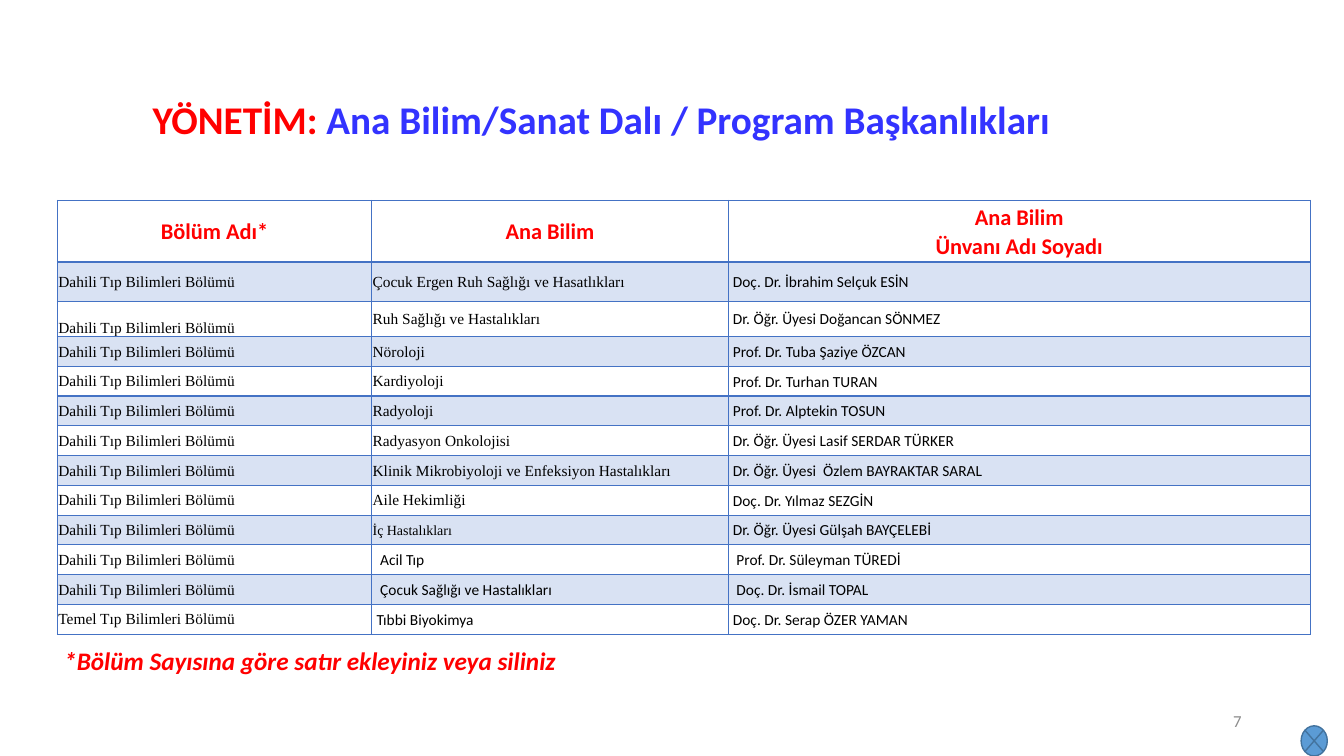
from lxml import etree
from pptx import Presentation
from pptx import util as u
from pptx.dml.color import RGBColor
from pptx.enum import shapes, text
from pptx.oxml import ns

TITLE = [("YÖNETİM: ", "red"), ("Ana Bilim/Sanat Dalı / Program Başkanlıkları", "title_blue")]
HEADERS = ["Bölüm Adı*", "Ana Bilim", "Ana Bilim\nÜnvanı Adı Soyadı"]
INTERNAL = "Dahili Tıp Bilimleri Bölümü"
BASIC = "Temel Tıp Bilimleri Bölümü"
CHAIRS = [
    (INTERNAL, "Çocuk Ergen Ruh Sağlığı ve Hasatlıkları", "Doç. Dr. İbrahim Selçuk ESİN"),
    (INTERNAL, "Ruh Sağlığı ve Hastalıkları", "Dr. Öğr. Üyesi Doğancan SÖNMEZ"),
    (INTERNAL, "Nöroloji", "Prof. Dr. Tuba Şaziye ÖZCAN"),
    (INTERNAL, "Kardiyoloji", "Prof. Dr. Turhan TURAN"),
    (INTERNAL, "Radyoloji", "Prof. Dr. Alptekin TOSUN"),
    (INTERNAL, "Radyasyon Onkolojisi", "Dr. Öğr. Üyesi Lasif SERDAR TÜRKER"),
    (INTERNAL, "Klinik Mikrobiyoloji ve Enfeksiyon Hastalıkları", "Dr. Öğr. Üyesi  Özlem BAYRAKTAR SARAL"),
    (INTERNAL, "Aile Hekimliği", "Doç. Dr. Yılmaz SEZGİN"),
    (INTERNAL, "İç Hastalıkları", "Dr. Öğr. Üyesi Gülşah BAYÇELEBİ"),
    (INTERNAL, "Acil Tıp", "Prof. Dr. Süleyman TÜREDİ"),
    (INTERNAL, "Çocuk Sağlığı ve Hastalıkları", "Doç. Dr. İsmail TOPAL"),
    (BASIC, "Tıbbi Biyokimya", "Doç. Dr. Serap ÖZER YAMAN"),
]
FOOTNOTE = "*Bölüm Sayısına göre satır ekleyiniz veya siliniz"
PAGE_NUMBER = "7"

THEME = {
    "colors": {"red": "FF0000", "title_blue": "3333FF", "black": "000000", "grey": "8C8C8C",
               "grid": "4472C4", "badge": "5B9BD5", "badge_line": "43739E"},
    "sizes": {"title": 28, "header": 16, "body": 11, "small": 10, "note": 18, "page": 12},
    "sans": "Calibri",
    "serif": "Times New Roman",
}
COLUMN_WIDTHS = [7.92, 8.98, 14.67]
ROW_HEIGHTS = [1.55, 0.99, 0.89] + [0.75] * 10
SANS_FROM_ROW = 10
INDENTED_ROWS = (10, 11)
SMALL_CELL = (9, 1)
LOW_CELL = (2, 0)


def color(name):
    return RGBColor.from_string(THEME["colors"][name])


def apply(target, values):
    for name, value in values.items():
        setattr(target, name, value)


def add_run(paragraph, words, size, color_name, font="sans", **style):
    run = paragraph.add_run()
    run.text = words
    apply(run.font, {"name": THEME[font], "size": u.Pt(THEME["sizes"][size]), **style})
    run.font.color.rgb = color(color_name)


def add_text(slide, box, runs, size, frame_format, alignment, spacing=1.0, **style):
    frame = slide.shapes.add_textbox(*map(u.Cm, box)).text_frame
    apply(frame, frame_format)
    paragraph = frame.paragraphs[0]
    apply(paragraph, {"alignment": alignment, "line_spacing": spacing})
    for words, color_name in runs:
        add_run(paragraph, words, size, color_name, **style)


def add_borders(cell, bottom_width):
    properties = cell._tc.get_or_add_tcPr()
    for side, width in (("L", 1), ("R", 1), ("T", 1), ("B", bottom_width)):
        line = etree.SubElement(properties, ns.qn("a:ln" + side), w=str(u.Pt(width)))
        fill = etree.SubElement(line, ns.qn("a:solidFill"))
        etree.SubElement(fill, ns.qn("a:srgbClr"), val=THEME["colors"]["grid"])


def fill_cell(cell, shaded):
    if not shaded:
        cell.fill.background()
        return
    cell.fill.solid()
    cell.fill.fore_color.rgb = color("grid")
    tint = next(cell._tc.tcPr.find(ns.qn("a:solidFill")).iter(ns.qn("a:srgbClr")))
    etree.SubElement(tint, ns.qn("a:alpha"), val="20000")


def write_cell(cell, row, column, words):
    header = row == 0
    serif = not header and (column == 0 or column == 1 and row < SANS_FROM_ROW)
    side = 0.02 if serif else 0.12
    indent = 0.09 if row in INDENTED_ROWS and column > 0 else 0
    low = (row, column) == LOW_CELL
    apply(cell, {
        "vertical_anchor": text.MSO_ANCHOR.BOTTOM if low else text.MSO_ANCHOR.MIDDLE,
        "margin_left": u.Cm(side + indent), "margin_right": u.Cm(side),
        "margin_top": u.Cm(0.02 if serif else 0), "margin_bottom": 0,
    })
    size = "header" if header else "small" if (row, column) == SMALL_CELL else "body"
    for index, line in enumerate(words.split("\n")):
        frame = cell.text_frame
        paragraph = frame.add_paragraph() if index else frame.paragraphs[0]
        apply(paragraph, {
            "alignment": text.PP_ALIGN.CENTER if header else text.PP_ALIGN.LEFT,
            "line_spacing": 1.0 if serif else 1.07,
        })
        add_run(paragraph, line, size, "red" if header else "black",
                "serif" if serif else "sans", bold=header)
    add_borders(cell, 2 if header else 1)
    fill_cell(cell, row % 2 == 1)


def add_chairs_table(slide):
    rows = [HEADERS] + CHAIRS
    table = slide.shapes.add_table(
        len(rows), len(HEADERS), u.Cm(1.45), u.Cm(5.05),
        u.Cm(sum(COLUMN_WIDTHS)), u.Cm(sum(ROW_HEIGHTS))).table
    apply(table, {"first_row": False, "horz_banding": False})
    for column, width in zip(table.columns, COLUMN_WIDTHS):
        column.width = u.Cm(width)
    for row, height in zip(table.rows, ROW_HEIGHTS):
        row.height = u.Cm(height)
    for row, entries in enumerate(rows):
        for column, words in enumerate(entries):
            write_cell(table.cell(row, column), row, column, words)


def add_badge(slide):
    badge = slide.shapes.add_shape(
        shapes.MSO_SHAPE.FLOWCHART_SUMMING_JUNCTION, *map(u.Cm, (32.79, 18.29, 0.66, 0.76)))
    badge.shadow.inherit = False
    badge.fill.solid()
    badge.fill.fore_color.rgb = color("badge")
    badge.line.color.rgb = color("badge_line")
    badge.line.width = u.Pt(1)


def main():
    presentation = Presentation()
    apply(presentation, {"slide_width": u.Cm(33.87), "slide_height": u.Cm(19.05)})
    slide = presentation.slides.add_slide(presentation.slide_layouts[6])
    middle = {"word_wrap": True, "vertical_anchor": text.MSO_ANCHOR.MIDDLE}
    fitted = {"word_wrap": False, "auto_size": text.MSO_AUTO_SIZE.SHAPE_TO_FIT_TEXT}
    align = text.PP_ALIGN
    add_text(slide, (23.92, 17.66, 7.62, 1.01), [(PAGE_NUMBER, "grey")], "page", middle, align.RIGHT)
    add_badge(slide)
    add_text(slide, (0.28, 2.2, 29.74, 1.73), TITLE, "title", middle, align.CENTER, 0.9, bold=True)
    add_chairs_table(slide)
    add_text(slide, (1.37, 16.13, 13.06, 1.02), [(FOOTNOTE, "red")], "note", fitted, align.LEFT,
             bold=True, italic=True)
    presentation.save("out.pptx")


if __name__ == "__main__":
    main()
